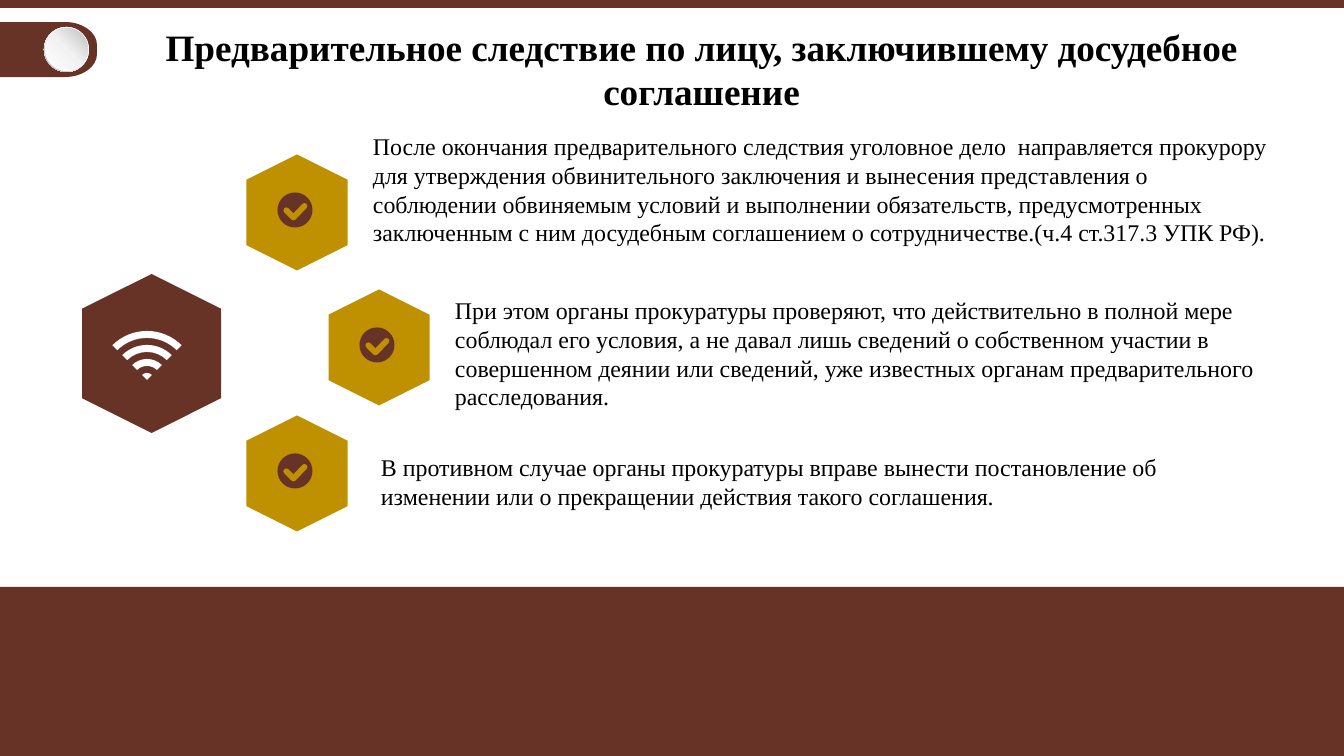
"""Build the slide about the pre-trial investigation of a person with a cooperation agreement."""
from copy import deepcopy
from dataclasses import dataclass
from math import cos, radians, sin, sqrt, tan

from pptx import Presentation
from pptx.dml.color import RGBColor
from pptx.enum.shapes import MSO_SHAPE
from pptx.enum.text import PP_ALIGN
from pptx.oxml.ns import qn
from pptx.util import Emu, Pt

EMU_PER_PX = 9565
Point = tuple[float, float]
Segment = tuple[Point, ...]


@dataclass(frozen=True)
class Theme:
    brown: str = "673326"
    gold: str = "BF9000"
    white: str = "FFFFFF"
    black: str = "000000"
    rim: tuple[str, str, str] = ("FFFFFF", "F2F2F2", "A6A6A6")
    face: tuple[str, str, str] = ("FFFFFF", "F2F2F2", "BFBFBF")
    font: str = "Times New Roman"
    title: int = 28
    body: int = 18


@dataclass(frozen=True)
class Step:
    hex_left: int
    hex_top: int
    text_left: int
    text_top: int
    text_width: int
    text: str


THEME = Theme()
STEPS = (
    Step(239, 162, 373, 132, 903,
         "После окончания предварительного следствия уголовное дело  направляется прокурору "
         "для утверждения обвинительного заключения и вынесения представления о соблюдении "
         "обвиняемым условий и выполнении обязательств, предусмотренных заключенным с ним "
         "досудебным соглашением о сотрудничестве.(ч.4 ст.317.3 УПК РФ)."),
    Step(321, 297, 455, 296, 829,
         "При этом органы прокуратуры проверяют, что действительно в полной мере соблюдал его "
         "условия, а не давал лишь сведений о собственном участии в совершенном деянии или "
         "сведений, уже известных органам предварительного расследования."),
    Step(239, 423, 381, 453, 836,
         "В противном случае органы прокуратуры вправе вынести постановление об изменении или "
         "о прекращении действия такого соглашения."),
)


def px(n: float) -> Emu:
    return Emu(round(n * EMU_PER_PX))


def paint(sp, color: str) -> None:
    sp.shadow.inherit = False
    sp.fill.solid()
    sp.fill.fore_color.rgb = RGBColor.from_string(color)
    sp.line.fill.background()


def add_preset(s, kind: MSO_SHAPE, left: int, top: int, width: int, height: int, color: str):
    sp = s.shapes.add_shape(kind, px(left), px(top), px(width), px(height))
    paint(sp, color)
    return sp


def add_hexagon(s, left: int, top: int, width: int, height: int, color: str) -> None:
    sp = add_preset(s, MSO_SHAPE.HEXAGON, left, top, width, height, color)
    sp.adjustments[0] = 0.25
    sp.adjustments[1] = 1.155
    sp.rotation = 90


def shade(sp, colors: tuple[str, str, str], middle: int, angle: int) -> None:
    sp.fill.gradient()
    sp.fill.gradient_angle = angle
    for stop, color in zip(sp.fill.gradient_stops, (colors[0], colors[2])):
        stop.color.rgb = RGBColor.from_string(color)
    gs_list = sp._element.spPr.find(qn("a:gradFill")).find(qn("a:gsLst"))
    gs = deepcopy(gs_list[0])
    gs.set("pos", str(middle * 1000))
    gs[0].set("val", colors[1])
    gs_list.insert(1, gs)
    gs_list[0].set("pos", "0")
    gs_list[2].set("pos", "100000")


def arc(cx: float, cy: float, rx: float, ry: float, start: int, end: int) -> list[Segment]:
    low, high = sorted((start, end))
    stops = [low, *(a for a in range(-360, 721, 90) if low < a < high), high]
    if start > end:
        stops.reverse()

    def at(angle: int, pull: float = 0) -> Point:
        a = radians(angle)
        return cx + rx * (cos(a) - pull * sin(a)), cy + ry * (sin(a) + pull * cos(a))

    segments: list[Segment] = [(at(start),)]
    for a, b in zip(stops, stops[1:]):
        pull = 4 / 3 * tan(radians(b - a) / 4)
        segments.append((at(a, pull), at(b, -pull), at(b)))
    return segments


def add_outline(s, contours: list[list[Segment]], color: str) -> None:
    scaled = [[(px(x), px(y)) for seg in contour for x, y in seg] for contour in contours]
    builder = s.shapes.build_freeform(*scaled[0][0], scale=1.0)
    for i, points in enumerate(scaled):
        if i:
            builder.move_to(*points[0])
        builder.add_line_segments(points[1:], close=True)
    sp = builder.convert_to_shape()
    paint(sp, color)
    outline = next(sp._element.spPr.iter(qn("a:path")))
    lines = iter(outline.findall(qn("a:lnTo")))
    for segment in (seg for contour in contours for seg in contour[1:]):
        first = next(lines)
        for _ in segment[1:]:
            extra = next(lines)
            first.append(extra[0])
            outline.remove(extra)
        if len(segment) == 3:
            first.tag = qn("a:cubicBezTo")


def add_badge(s, cx: int, cy: int) -> None:
    r = 3.1
    elbow_x, elbow_y = cx - 1.5, cy + 7.5
    tick = [
        *arc(cx - 8.6, cy + 0.4, r, r, 135, 315),
        ((elbow_x, elbow_y - r * sqrt(2)),),
        *arc(cx + 9.5, cy - 4, r, r, 225, 405),
        *arc(elbow_x, elbow_y, r, r, 45, 135),
    ]
    add_outline(s, [arc(cx, cy, 17.5, 17.5, 360, 0), tick], THEME.brown)


def add_signal(s, cx: int, cy: int, band: int) -> None:
    contours = []
    for outer in range(7 * band, 0, -2 * band):
        inner = outer - band
        back = arc(cx, cy, inner, inner, 315, 225) if inner else [((cx, cy),)]
        contours.append(arc(cx, cy, outer, outer, 225, 315) + back)
    add_outline(s, contours, THEME.white)


def add_text(s, text: str, *, left: int, top: int, width: int, height: int, size: int,
             bold: bool = False, align: PP_ALIGN = PP_ALIGN.LEFT, inset: int = 0) -> None:
    tf = s.shapes.add_textbox(px(left), px(top), px(width), px(height)).text_frame
    tf.word_wrap = True
    tf.margin_left = tf.margin_right = px(inset)
    tf.margin_top = tf.margin_bottom = px(inset / 2)
    p = tf.paragraphs[0]
    p.alignment = align
    r = p.add_run()
    r.text = text
    r.font.name = THEME.font
    r.font.size = Pt(size)
    r.font.bold = bold
    r.font.color.rgb = RGBColor.from_string(THEME.black)


def add_header(s) -> None:
    tab = [((0, 22),), *arc(65, 45, 32, 23, -90, 0), *arc(65, 54, 32, 23, 0, 90), ((0, 77),)]
    add_outline(s, [tab], THEME.brown)
    add_preset(s, MSO_SHAPE.RECTANGLE, 0, 0, 1344, 8, THEME.brown)
    rim = add_preset(s, MSO_SHAPE.DONUT, 44, 27, 45, 45, THEME.white)
    rim.adjustments[0] = 0.05
    shade(rim, THEME.rim, 55, 225)
    face = add_preset(s, MSO_SHAPE.OVAL, 45, 28, 43, 43, THEME.white)
    shade(face, THEME.face, 51, 45)
    add_text(s, "Предварительное следствие по лицу, заключившему досудебное соглашение",
             left=74, top=19, width=1255, height=99, size=THEME.title, bold=True,
             align=PP_ALIGN.CENTER, inset=10)


def main() -> None:
    prs = Presentation()
    prs.slide_width, prs.slide_height = px(1344), px(756)
    s = prs.slides.add_slide(prs.slide_layouts[6])
    add_preset(s, MSO_SHAPE.RECTANGLE, 0, 587, 1344, 169, THEME.brown)
    add_header(s)
    add_hexagon(s, 72, 284, 159, 139, THEME.brown)
    add_signal(s, 147, 380, 7)
    for step in STEPS:
        add_hexagon(s, step.hex_left, step.hex_top, 116, 101, THEME.gold)
        add_badge(s, step.hex_left + 56, step.hex_top + 48)
        add_text(s, step.text, left=step.text_left, top=step.text_top,
                 width=step.text_width, height=53, size=THEME.body)
    prs.save("out.pptx")


if __name__ == "__main__":
    main()
